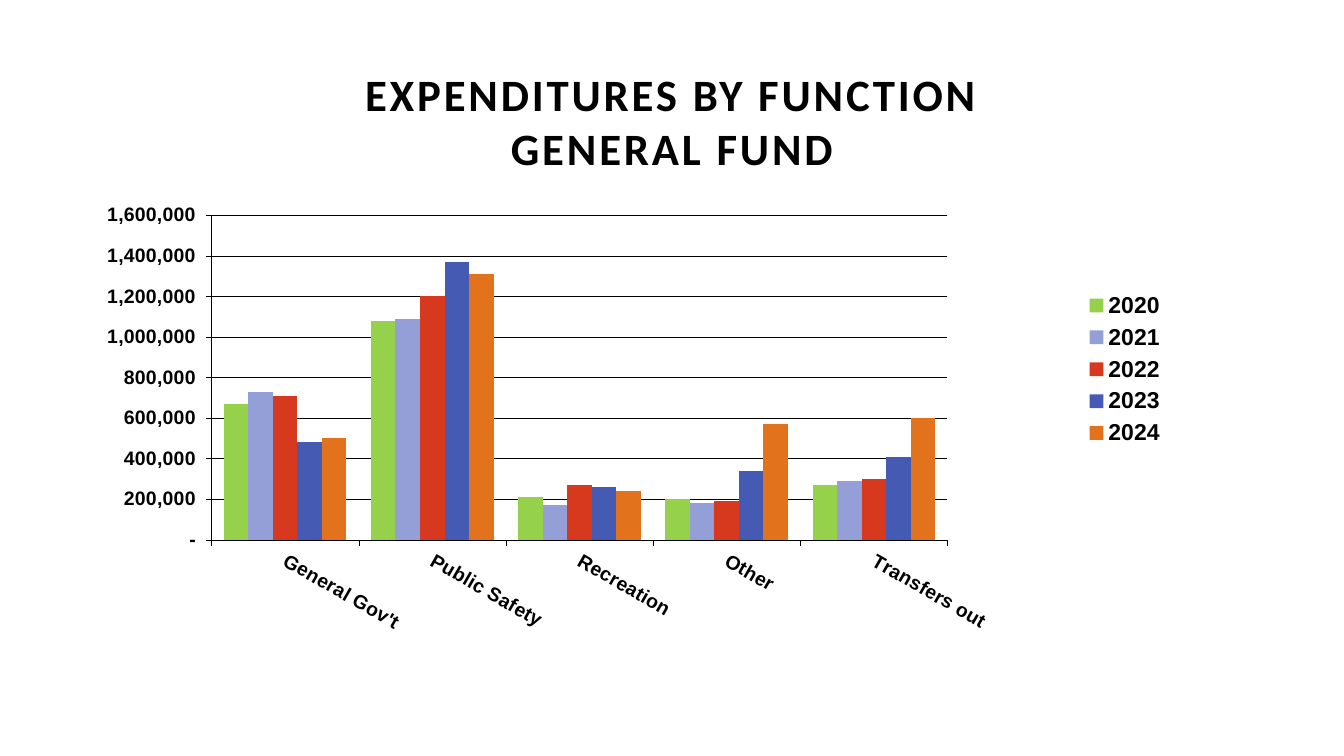
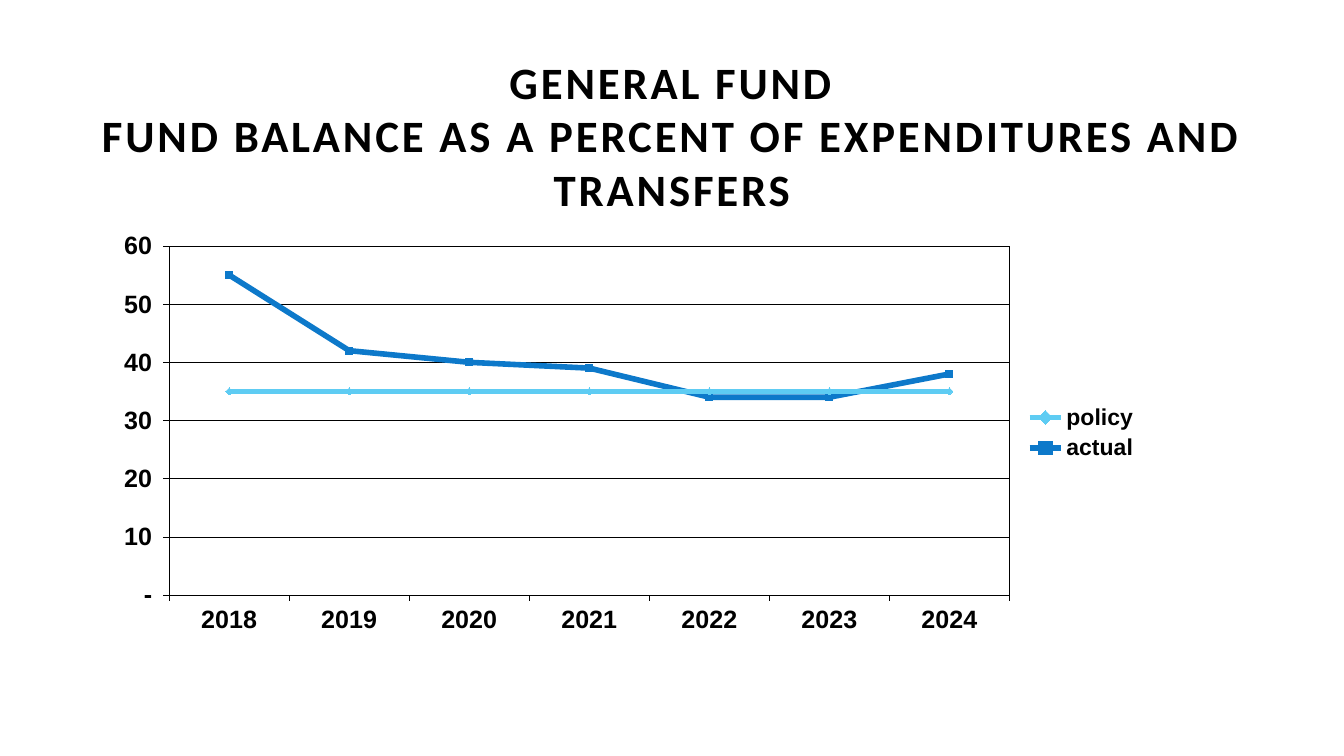
import pptx
import pptx.chart.data
import pptx.dml.color
import pptx.enum.chart
import pptx.enum.text
import pptx.oxml
import pptx.oxml.ns
import pptx.util
from pptx.util import Inches

BLACK = pptx.dml.color.RGBColor(0x00, 0x00, 0x00)
GREEN = pptx.dml.color.RGBColor(0x95, 0xD1, 0x4A)
LAVENDER = pptx.dml.color.RGBColor(0x94, 0x9F, 0xD7)
RED = pptx.dml.color.RGBColor(0xD7, 0x39, 0x1F)
INDIGO = pptx.dml.color.RGBColor(0x45, 0x5A, 0xB2)
ORANGE = pptx.dml.color.RGBColor(0xE3, 0x72, 0x1D)
BLUE = pptx.dml.color.RGBColor(0x0D, 0x79, 0xCA)
SKY = pptx.dml.color.RGBColor(0x5E, 0xCC, 0xF3)

NUMBER_FORMAT = '_(* #,##0_);_(* \\(#,##0\\);_(* "-"_);_(@_)'
CHART_TYPES = pptx.enum.chart.XL_CHART_TYPE
MARKERS = pptx.enum.chart.XL_MARKER_STYLE


def write_title(slide, text, height, size=32, font="Calibri", color=BLACK, spacing=2):
    title = slide.shapes.title
    title.left, title.top = Inches(0.25), Inches(0.62)
    title.width, title.height = Inches(12.83), Inches(height)
    frame = title.text_frame
    frame.text = text
    frame.word_wrap = True
    frame.auto_size = pptx.enum.text.MSO_AUTO_SIZE.NONE
    frame.vertical_anchor = pptx.enum.text.MSO_ANCHOR.MIDDLE
    paragraph = frame.paragraphs[0]
    paragraph.alignment = pptx.enum.text.PP_ALIGN.CENTER
    for run in paragraph.runs:
        run.font.size = pptx.util.Pt(size)
        run.font.name = font
        run.font.bold = True
        run.font.color.rgb = color
        run.font._element.set("spc", str(spacing * 100))


def place_layout(parent, box, inner=False):
    for old in parent.findall(pptx.oxml.ns.qn("c:layout")):
        parent.remove(old)
    target = '<c:layoutTarget val="inner"/>' if inner else ""
    modes = '<c:xMode val="edge"/><c:yMode val="edge"/>'
    sizes = "".join(f'<c:{key} val="{value}"/>' for key, value in zip("xywh", box))
    layout = pptx.oxml.parse_xml(
        f'<c:layout {pptx.oxml.ns.nsdecls("c")}>'
        f"<c:manualLayout>{target}{modes}{sizes}</c:manualLayout></c:layout>"
    )
    parent.insert(0 if inner else 1, layout)


slides = [
    {
        "title": "EXPENDITURES BY FUNCTION\vGENERAL FUND",
        "title_height": 1.15,
        "kind": CHART_TYPES.COLUMN_CLUSTERED,
        "at": (0.25, 1.88, 12.83, 4.82),
        "plot": (0.144, 0.053, 0.569, 0.668),
        "legend": (0.81, 0.2, 0.08, 0.34),
        "axis_size": 13.9,
        "scale": (1600000, 200000),
        "categories": ["General Gov't", "Public Safety", "Recreation", "Other", "Transfers out"],
        "series": [
            ("2020", [670000, 1080000, 210000, 200000, 270000], GREEN, None),
            ("2021", [730000, 1090000, 170000, 180000, 290000], LAVENDER, None),
            ("2022", [710000, 1200000, 270000, 190000, 300000], RED, None),
            ("2023", [480000, 1370000, 260000, 340000, 410000], INDIGO, None),
            ("2024", [500000, 1310000, 240000, 570000, 600000], ORANGE, None),
        ],
    },
    {
        "title": "GENERAL FUND\vFUND BALANCE AS A PERCENT OF EXPENDITURES AND TRANSFERS",
        "title_height": 1.44,
        "kind": CHART_TYPES.LINE_MARKERS_STACKED,
        "at": (0.76, 2.07, 12.08, 4.63),
        "plot": (0.076, 0.08, 0.69, 0.748),
        "legend": (0.77, 0.41, 0.11, 0.14),
        "axis_size": 17.9,
        "scale": (60, 10),
        "categories": ["2018", "2019", "2020", "2021", "2022", "2023", "2024"],
        "series": [
            ("actual", [55, 42, 40, 39, 34, 34, 38], BLUE, MARKERS.SQUARE),
            ("policy", [-20, -7, -5, -4, 1, 1, -3], SKY, MARKERS.DIAMOND),
        ],
    },
]

deck = pptx.Presentation()
deck.slide_width, deck.slide_height = Inches(13.33), Inches(7.5)

for content in slides:
    slide = deck.slides.add_slide(deck.slide_layouts[5])
    write_title(slide, content["title"], content["title_height"])

    figures = pptx.chart.data.CategoryChartData(number_format=NUMBER_FORMAT)
    figures.categories = content["categories"]
    for name, values, color, marker in content["series"]:
        figures.add_series(name, values)
    place = [Inches(length) for length in content["at"]]
    chart = slide.shapes.add_chart(content["kind"], *place, figures).chart
    chart.has_title = False
    chart.has_legend = True
    chart.legend.position = pptx.enum.chart.XL_LEGEND_POSITION.RIGHT
    chart.legend.include_in_layout = False

    vertical = chart.value_axis
    vertical.minimum_scale = 0
    vertical.maximum_scale, vertical.major_unit = content["scale"]
    vertical.has_major_gridlines = True
    vertical.tick_labels.number_format = NUMBER_FORMAT
    vertical.tick_labels.number_format_is_linked = False
    for line in (vertical.format.line, chart.category_axis.format.line,
                 vertical.major_gridlines.format.line):
        line.color.rgb = BLACK
        line.width = pptx.util.Pt(0.25)
    for axis in (vertical, chart.category_axis):
        axis.major_tick_mark = pptx.enum.chart.XL_TICK_MARK.OUTSIDE
        axis.minor_tick_mark = pptx.enum.chart.XL_TICK_MARK.NONE

    axis_size = content["axis_size"]
    for font, size in ((chart.font, 17.9), (chart.legend.font, 16.4),
                       (vertical.tick_labels.font, axis_size),
                       (chart.category_axis.tick_labels.font, axis_size)):
        font.name = "Arial"
        font.size = pptx.util.Pt(size)
        font.bold = True
        font.color.rgb = BLACK

    plot = chart.plots[0]
    plot.vary_by_categories = False
    for series, (name, values, color, marker) in zip(plot.series, content["series"]):
        if marker is None:
            series.format.fill.solid()
            series.format.fill.fore_color.rgb = color
            series.invert_if_negative = False
        else:
            series.smooth = False
            series.format.line.color.rgb = color
            series.format.line.width = pptx.util.Pt(4)
            series.marker.style = marker
            series.marker.size = 5
            series.marker.format.fill.solid()
            series.marker.format.fill.fore_color.rgb = color
            series.marker.format.line.color.rgb = color

    plot_area = chart._chartSpace.chart.plotArea
    place_layout(plot_area, content["plot"], inner=True)
    place_layout(chart.legend._element, content["legend"])

    if content["kind"] == CHART_TYPES.COLUMN_CLUSTERED:
        plot.gap_width = 100
        plot.overlap = 0
        labels = chart.category_axis
        labels.tick_label_position = pptx.enum.chart.XL_TICK_LABEL_POSITION.LOW
        labels._element.txPr.bodyPr.set("rot", str(30 * 60000))
        labels._element.txPr.bodyPr.set("vert", "horz")
    else:
        plot_area.append(pptx.oxml.parse_xml(
            f'<c:spPr {pptx.oxml.ns.nsdecls("c", "a")}><a:noFill/>'
            f'<a:ln w="{pptx.util.Pt(0.25)}"><a:solidFill>'
            f'<a:srgbClr val="{BLACK}"/></a:solidFill></a:ln></c:spPr>'
        ))

deck.save("out.pptx")
